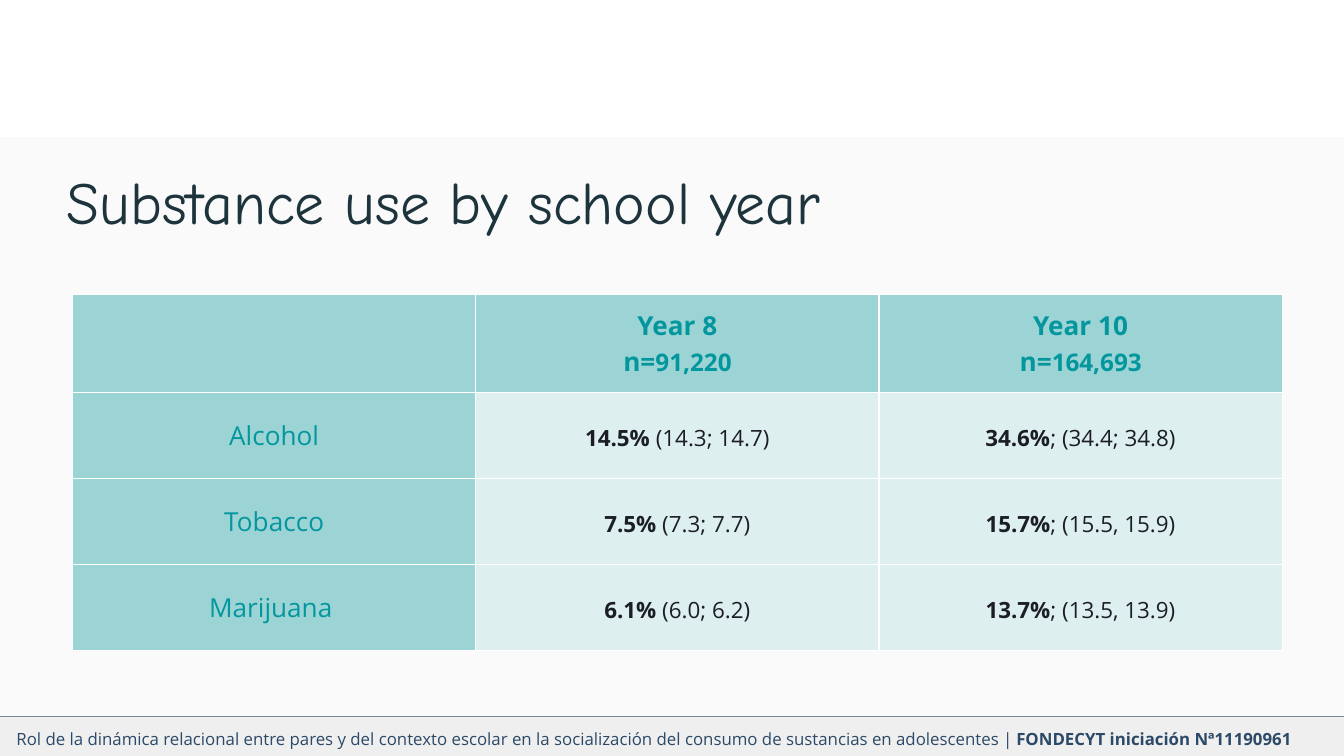
"""Build the slide comparing substance use by school year."""
from dataclasses import dataclass
from typing import Optional

import lxml.etree
import pptx
import pptx.dml.color
import pptx.enum.shapes
import pptx.enum.text
import pptx.oxml.ns
import pptx.util

Inches = pptx.util.Inches
Align = pptx.enum.text.PP_ALIGN
Anchor = pptx.enum.text.MSO_ANCHOR
qn = pptx.oxml.ns.qn


@dataclass(frozen=True)
class Theme:
    """Colours, fonts and type sizes."""
    white: str = "FFFFFF"
    page: str = "EFEFEF"
    panel: str = "FAFAFA"
    navy: str = "2C4A68"
    title: str = "1D343C"
    teal: str = "03979D"
    ink: str = "1B1E25"
    head_font: str = "Comic Neue"
    body_font: str = "Open Sans"
    title_size: float = 32
    label_size: float = 14
    count_size: float = 13
    value_size: float = 12
    footer_size: float = 9
    rule: float = 0.75
    label_alpha: int = 38
    value_alpha: int = 11


@dataclass(frozen=True)
class Run:
    """A piece of text that may differ from its paragraph."""
    text: str
    bold: Optional[bool] = None
    size: Optional[float] = None


@dataclass(frozen=True)
class Style:
    """The look of a paragraph."""
    size: float
    color: str
    font: str
    bold: bool = False
    align: Align = Align.CENTER
    spacing: Optional[float] = None


@dataclass(frozen=True)
class Year:
    """A column heading with its sample size."""
    name: str
    count: str


@dataclass(frozen=True)
class Substance:
    """A table row: percentage and interval for each year."""
    name: str
    values: tuple[tuple[str, str], ...]


T = Theme()
TITLE = Style(T.title_size, T.title, T.head_font, align=Align.LEFT)
FOOTER = Style(T.footer_size, T.navy, T.body_font)
HEADING = Style(T.label_size, T.teal, T.body_font, bold=True)
LABEL = Style(T.label_size, T.teal, T.body_font)
VALUE = Style(T.value_size, T.ink, T.body_font, spacing=1.15)

YEARS = (Year("Year 8", "91,220"), Year("Year 10", "164,693"))
SUBSTANCES = (
    Substance("Alcohol", (("14.5%", " (14.3; 14.7)"), ("34.6%", "; (34.4; 34.8)"))),
    Substance("Tobacco", (("7.5%", " (7.3; 7.7)"), ("15.7%", "; (15.5, 15.9)"))),
    Substance("Marijuana ", (("6.1%", " (6.0; 6.2)"), ("13.7%", "; (13.5, 13.9)"))),
)


def rgb(color: str) -> pptx.dml.color.RGBColor:
    """Turn a hex string into a colour."""
    return pptx.dml.color.RGBColor.from_string(color)


def write(tf, lines: list[list[Run]], style: Style) -> None:
    """Fill a text frame, one paragraph for each list of runs."""
    for i, runs in enumerate(lines):
        p = tf.paragraphs[0] if i == 0 else tf.add_paragraph()
        p.alignment = style.align
        if style.spacing:
            p.line_spacing = style.spacing
        p.font.name = style.font
        p.font.size = pptx.util.Pt(style.size)
        p.font.bold = style.bold
        p.font.color.rgb = rgb(style.color)
        for run in runs:
            r = p.add_run()
            r.text = run.text
            if run.bold is not None:
                r.font.bold = run.bold
            if run.size is not None:
                r.font.size = pptx.util.Pt(run.size)


def set_margins(target) -> None:
    """Give a text frame or cell equal margins."""
    for side in ("left", "right", "top", "bottom"):
        setattr(target, f"margin_{side}", Inches(0.1))


def add_panel(s, top: float, height: float, color: str) -> None:
    """Draw a full-width band."""
    sp = s.shapes.add_shape(pptx.enum.shapes.MSO_SHAPE.RECTANGLE,
                            0, Inches(top), Inches(10), Inches(height))
    sp.shadow.inherit = False
    sp.fill.solid()
    sp.fill.fore_color.rgb = rgb(color)
    sp.line.fill.background()


def add_text(s, box: tuple[float, float, float, float], runs: list[Run],
             style: Style, anchor: Anchor) -> None:
    """Add a one-paragraph text box."""
    tf = s.shapes.add_textbox(*map(Inches, box)).text_frame
    tf.word_wrap = True
    tf.vertical_anchor = anchor
    set_margins(tf)
    write(tf, [runs], style)


def add_rule(s, top: float) -> None:
    """Draw a full-width horizontal line."""
    line = s.shapes.add_connector(pptx.enum.shapes.MSO_CONNECTOR.STRAIGHT,
                                  0, Inches(top), Inches(10.02), Inches(top))
    line.line.color.rgb = rgb(T.navy)
    line.line.width = pptx.util.Pt(T.rule)
    lxml.etree.SubElement(line._element.spPr, qn("a:effectLst"))


def style_cell(cell, alpha: int) -> None:
    """Set a cell's margins, white borders and translucent fill."""
    set_margins(cell)
    cell.vertical_anchor = Anchor.MIDDLE
    tc_pr = cell._tc.get_or_add_tcPr()
    for side in ("lnL", "lnR", "lnT", "lnB"):
        ln = lxml.etree.SubElement(tc_pr, qn(f"a:{side}"), w=str(pptx.util.Pt(T.rule)))
        fill = lxml.etree.SubElement(ln, qn("a:solidFill"))
        lxml.etree.SubElement(fill, qn("a:srgbClr"), val=T.white)
    cell.fill.solid()
    cell.fill.fore_color.rgb = rgb(T.teal)
    clr = tc_pr.find(qn("a:solidFill")).find(qn("a:srgbClr"))
    lxml.etree.SubElement(clr, qn("a:alpha"), val=str(alpha * 1000))


def add_usage_table(s) -> None:
    """Draw the table of substances by school year."""
    rows, cols = len(SUBSTANCES) + 1, len(YEARS) + 1
    table = s.shapes.add_table(rows, cols, Inches(0.54), Inches(2.19),
                               Inches(9), Inches(2.65)).table
    table.first_row = table.horz_banding = False
    for i, row in enumerate(table.rows):
        row.height = Inches(0.64 if i else 0.73)
        for j, cell in enumerate(row.cells):
            style_cell(cell, T.value_alpha if i and j else T.label_alpha)
    for j, year in enumerate(YEARS, 1):
        count = [Run("n="), Run(year.count, size=T.count_size)]
        write(table.cell(0, j).text_frame, [[Run(year.name)], count], HEADING)
    for i, item in enumerate(SUBSTANCES, 1):
        write(table.cell(i, 0).text_frame, [[Run(item.name)]], LABEL)
        for j, (share, interval) in enumerate(item.values, 1):
            write(table.cell(i, j).text_frame, [[Run(share, bold=True), Run(interval)]], VALUE)


def main() -> None:
    """Build and save the slide."""
    prs = pptx.Presentation()
    prs.slide_width, prs.slide_height = Inches(10), Inches(10 * 9 / 16)
    s = prs.slides.add_slide(prs.slide_layouts[6])
    s.background.fill.solid()
    s.background.fill.fore_color.rgb = rgb(T.page)
    add_panel(s, 0, 1.02, T.white)
    add_text(s, (0, 5.33, 9.73, 0.33), [
        Run("Rol de la dinámica relacional entre pares y del contexto escolar en la "
            "socialización del consumo de sustancias en adolescentes |"),
        Run(" FONDECYT iniciación Nª11190961", bold=True)], FOOTER, Anchor.MIDDLE)
    add_rule(s, 5.33)
    add_panel(s, 1.02, 4.31, T.panel)
    add_text(s, (0.4, 1.02, 8.89, 0.84), [Run("Substance use by school year")],
             TITLE, Anchor.BOTTOM)
    add_usage_table(s)
    prs.save("out.pptx")


if __name__ == "__main__":
    main()
